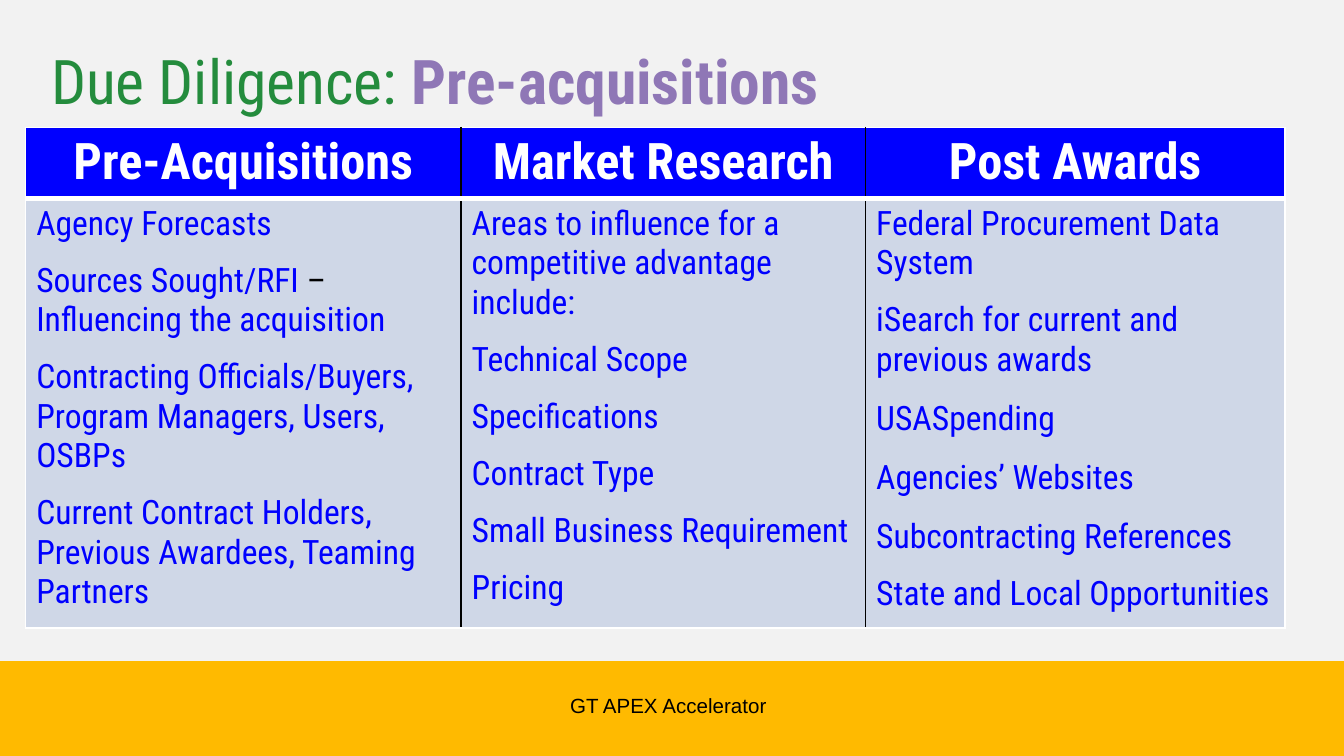
from lxml import etree
from pptx import Presentation
from pptx.dml.color import RGBColor
from pptx.enum.shapes import MSO_SHAPE
from pptx.enum.text import MSO_ANCHOR, MSO_AUTO_SIZE, PP_ALIGN
from pptx.oxml.ns import qn
from pptx.util import Inches, Pt

RECTANGLE = MSO_SHAPE.RECTANGLE
BOTTOM = MSO_ANCHOR.BOTTOM
NO_FIT = MSO_AUTO_SIZE.NONE
LEFT, CENTER = PP_ALIGN.LEFT, PP_ALIGN.CENTER
CONDENSED = "Roboto Condensed"
BLUE, WHITE, BLACK = "0000FF", "FFFFFF", "000000"


def set_font(font, name, size, color, bold=False):
    font.name = name
    font.size = Pt(size)
    font.bold = bold
    font.color.rgb = RGBColor.from_string(color)


def add_border(cell, side, color, width):
    line = etree.SubElement(cell._tc.get_or_add_tcPr(), qn(f"a:ln{side}"), w=str(Pt(width)))
    fill = etree.SubElement(line, qn("a:solidFill"))
    etree.SubElement(fill, qn("a:srgbClr"), val=color)


deck = Presentation()
deck.slide_width = Inches(10)
deck.slide_height = deck.slide_width * 9 // 16
page = deck.slides.add_slide(deck.slide_layouts[5])
page.background.fill.solid()
page.background.fill.fore_color.rgb = RGBColor.from_string("F2F2F2")

band_top = Inches(4.92)
footer_band = page.shapes.add_shape(
    RECTANGLE, 0, band_top, deck.slide_width, deck.slide_height - band_top
)
footer_band.shadow.inherit = False
footer_band.fill.solid()
footer_band.fill.fore_color.rgb = RGBColor.from_string("FFBA00")
footer_band.line.fill.background()

title = page.shapes.title
title.left, title.top = Inches(0.38), Inches(0.17)
title.width, title.height = Inches(6.75), Inches(0.7)
frame = title.text_frame
frame.auto_size = NO_FIT
frame.word_wrap = True
frame.vertical_anchor = BOTTOM
frame.margin_left = frame.margin_top = frame.margin_bottom = 0
frame.margin_right = Inches(0.07)
para = frame.paragraphs[0]
para.alignment = LEFT
for text, color, bold in [("Due Diligence: ", "248C3D", False), ("Pre-acquisitions", "8F77B6", True)]:
    span = para.add_run()
    span.text = text
    set_font(span.font, CONDENSED, 33, color, bold)

footer = page.shapes.add_textbox(Inches(3.26), Inches(5.08), Inches(3.47), Inches(0.3))
frame = footer.text_frame
frame.word_wrap = True
frame.vertical_anchor = BOTTOM
frame.margin_left = frame.margin_right = Inches(0.07)
frame.margin_top = frame.margin_bottom = Inches(0.04)
para = frame.paragraphs[0]
para.text = "GT APEX Accelerator "
para.alignment = CENTER
set_font(para.font, "Arial", 11, BLACK)

columns = [
    ("Pre-Acquisitions", 3.24, [
        "Agency Forecasts",
        "Sources Sought/RFI – Influencing the acquisition",
        "Contracting Officials/Buyers, Program Managers, Users, OSBPs",
        "Current Contract Holders, Previous Awardees, Teaming Partners",
    ]),
    ("Market Research", 3.01, [
        "Areas to influence for a competitive advantage include:",
        "Technical Scope",
        "Specifications",
        "Contract Type",
        "Small Business Requirement",
        "Pricing",
    ]),
    ("Post Awards", 3.12, [
        "Federal Procurement Data System",
        "iSearch for current and previous awards",
        "USASpending",
        "Agencies’ Websites",
        "Subcontracting References",
        "State and Local Opportunities",
    ]),
]
open_lines = ["USASpending", "Agencies’ Websites", "Subcontracting References"]

table_frame = page.shapes.add_table(
    2, len(columns), Inches(0.19), Inches(0.95), Inches(9.38), Inches(3.72)
)
table = table_frame.table
table.rows[0].height, table.rows[1].height = Inches(0.38), Inches(2.17)
last = len(columns) - 1

for col, (heading, width, entries) in enumerate(columns):
    table.columns[col].width = Inches(width)
    for row, lines in enumerate([[heading], entries]):
        cell = table.cell(row, col)
        cell.margin_left = cell.margin_right = Inches(0.08)
        cell.margin_top = cell.margin_bottom = Inches(0.04)
        add_border(cell, "L", WHITE if col == 0 else BLACK, 1)
        add_border(cell, "R", WHITE if col == last else BLACK, 1)
        add_border(cell, "T", WHITE, 1 if row == 0 else 3)
        add_border(cell, "B", WHITE, 3 if row == 0 else 1)
        cell.fill.solid()
        cell.fill.fore_color.rgb = RGBColor.from_string("CFD7E7" if row else BLUE)
        for index, text in enumerate(lines):
            para = cell.text_frame.paragraphs[0] if index == 0 else cell.text_frame.add_paragraph()
            para.alignment = LEFT if row else CENTER
            if text in open_lines:
                para.line_spacing = 1.5
            elif index:
                para.space_before = Pt(9.4)
            before, dash, after = text.partition("– ")
            for part in filter(None, [before, dash, after]):
                span = para.add_run()
                span.text = part
                if row == 0:
                    set_font(span.font, CONDENSED, 27, WHITE, True)
                else:
                    set_font(span.font, CONDENSED, 18, BLACK if part == dash else BLUE)

table_frame.width, table_frame.height = Inches(9.38), Inches(3.72)
deck.save("out.pptx")
